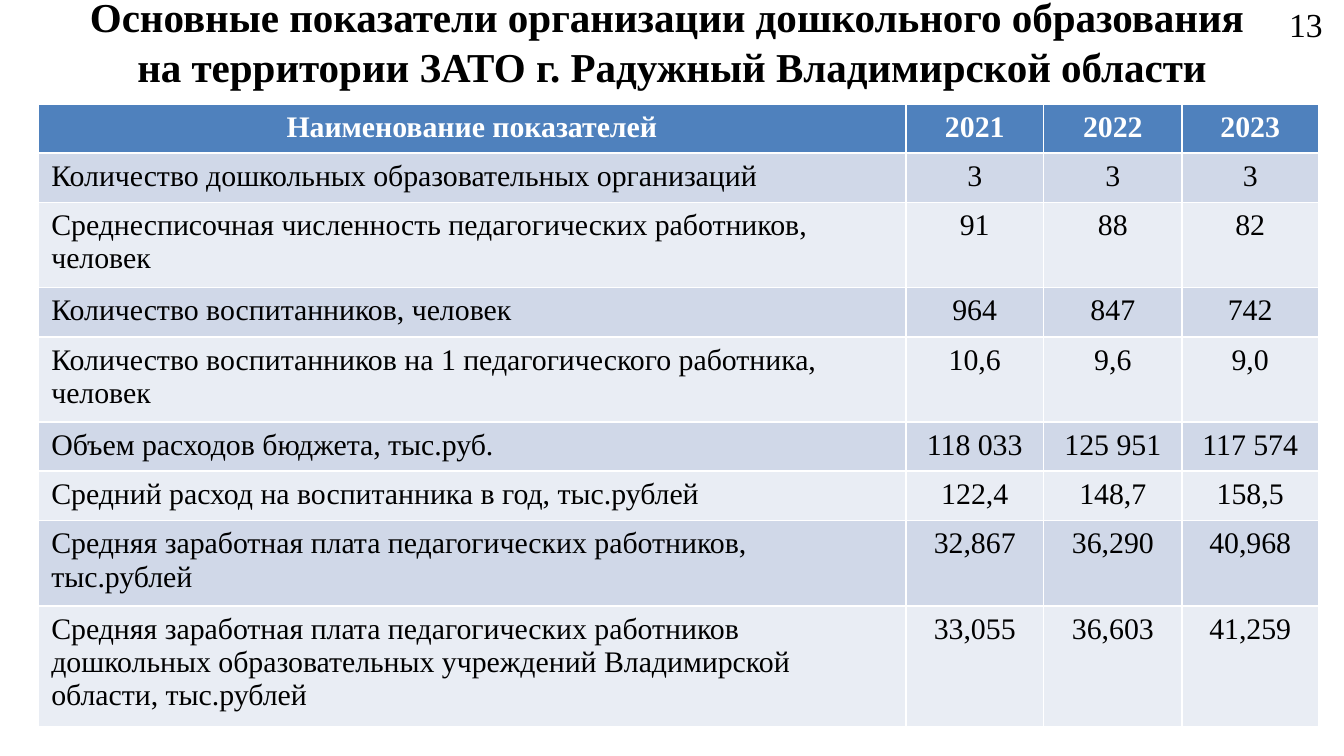
"""Build a slide with a table of preschool education indicators."""
import pptx
import pptx.dml.color
import pptx.enum.text
import pptx.util

Pt = pptx.util.Pt
PP_ALIGN = pptx.enum.text.PP_ALIGN
MSO_ANCHOR = pptx.enum.text.MSO_ANCHOR


def color(value):
    return pptx.dml.color.RGBColor.from_string(value)


def style(tf, size, value, bold, align):
    for p in tf.paragraphs:
        p.alignment = align
        for r in p.runs:
            r.font.name = "Times New Roman"
            r.font.size = Pt(size)
            r.font.bold = bold
            r.font.color.rgb = color(value)


prs = pptx.Presentation()
prs.slide_width, prs.slide_height = Pt(720), Pt(405)
s = prs.slides.add_slide(prs.slide_layouts[6])

title = ("Основные показатели организации дошкольного образования \v"
         "на территории ЗАТО г. Радужный Владимирской области")
texts = [
    (title, 0, 0, 720, 44, 22, True, PP_ALIGN.CENTER, MSO_ANCHOR.MIDDLE),
    ("13", 683.5, -1.5, 36.5, 29, 18, False, PP_ALIGN.LEFT, MSO_ANCHOR.TOP),
]
for text, x, y, w, h, size, bold, align, anchor in texts:
    sp = s.shapes.add_textbox(Pt(x), Pt(y), Pt(w), Pt(h))
    tf = sp.text_frame
    tf.word_wrap = True
    tf.vertical_anchor = anchor
    tf.text = text
    style(tf, size, "000000", bold, align)

rows = [
    ("Наименование показателей", "2021", "2022", "2023"),
    ("Количество дошкольных образовательных организаций", "3", "3", "3"),
    ("Среднесписочная численность педагогических работников, человек",
     "91", "88", "82"),
    ("Количество воспитанников, человек", "964", "847", "742"),
    ("Количество воспитанников на 1 педагогического работника, человек",
     "10,6", "9,6", "9,0"),
    ("Объем расходов бюджета, тыс.руб.", "118 033", "125 951", "117 574"),
    ("Средний расход на воспитанника в год, тыс.рублей",
     "122,4", "148,7", "158,5"),
    ("Средняя заработная плата педагогических работников, тыс.рублей",
     "32,867", "36,290", "40,968"),
    ("Средняя заработная плата педагогических работников дошкольных "
     "образовательных учреждений Владимирской области, тыс.рублей",
     "33,055", "36,603", "41,259"),
]
widths = [465, 73.8, 74.2, 73]
heights = [24.8] * 8 + [39]
table = s.shapes.add_table(len(rows), len(widths), Pt(20.3), Pt(55.6),
                           Pt(sum(widths)), Pt(sum(heights))).table
for column, width in zip(table.columns, widths):
    column.width = Pt(width)
for i, (row, height) in enumerate(zip(rows, heights)):
    table.rows[i].height = Pt(height)
    header = i == 0
    fill = "4F81BD" if header else ("E9EDF4", "D0D8E8")[i % 2]
    for j, text in enumerate(row):
        cell = table.cell(i, j)
        cell.fill.solid()
        cell.fill.fore_color.rgb = color(fill)
        cell.text_frame.text = text
        align = PP_ALIGN.CENTER if header or j else PP_ALIGN.LEFT
        style(cell.text_frame, 16, "FFFFFF" if header else "000000",
              header, align)

prs.save("out.pptx")
